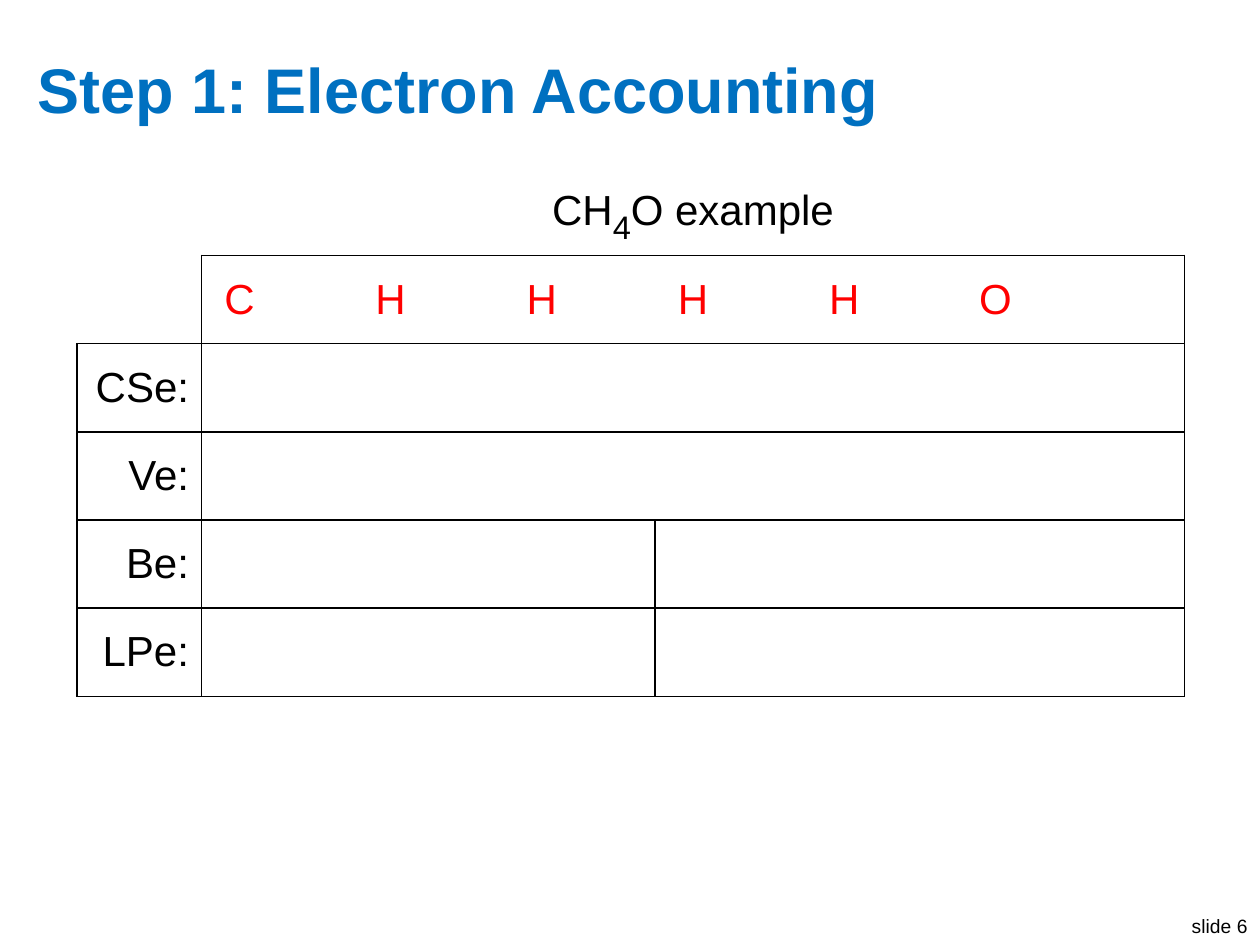
from lxml import etree
from pptx import Presentation
from pptx.dml.color import RGBColor
from pptx.enum import text
from pptx.oxml import ns
from pptx.util import Pt

BLACK = RGBColor(0, 0, 0)
WHITE = RGBColor(255, 255, 255)
RED = RGBColor(255, 0, 0)
BLUE = RGBColor(0, 0x70, 0xC0)
RIGHT, CENTER = text.PP_ALIGN.RIGHT, text.PP_ALIGN.CENTER


def style(p, size, color, align=None, bold=False):
    p.alignment = align
    for r in p.runs:
        r.font.name, r.font.size, r.font.bold = "Arial", Pt(size), bold
        r.font.color.rgb = color


def set_borders(cell, drawn):
    # Lines come before the fill, in the order left, right, top, bottom
    tcPr = cell._tc.get_or_add_tcPr()
    for i, side in enumerate("LRTB"):
        ln = etree.Element(ns.qn(f"a:ln{side}"), w=str(Pt(1)))
        if side in drawn:
            fill = etree.SubElement(ln, ns.qn("a:solidFill"))
            etree.SubElement(fill, ns.qn("a:srgbClr"), val=str(BLACK))
        else:
            etree.SubElement(ln, ns.qn("a:noFill"))
        tcPr.insert(i, ln)


prs = Presentation()
prs.slide_width, prs.slide_height = Pt(720), Pt(540)
s = prs.slides.add_slide(prs.slide_layouts[6])

# Slide number
tf = s.shapes.add_textbox(Pt(666), Pt(519), Pt(54), Pt(21)).text_frame
tf.word_wrap = False
tf.text = "slide 6"
style(tf.paragraphs[0], 11, BLACK, RIGHT)

# Title
tf = s.shapes.add_textbox(Pt(14.4), Pt(21.6), Pt(691.2), Pt(57.6)).text_frame
tf.word_wrap = True
tf.vertical_anchor = text.MSO_ANCHOR.MIDDLE
tf.text = "Step 1: Electron Accounting"
style(tf.paragraphs[0], 36, BLUE, bold=True)

# Table grid
ROWS, COLS = 6, 14
tbl = s.shapes.add_table(ROWS, COLS, Pt(43.9), Pt(95), Pt(632.9), Pt(302.4)).table
tbl.first_row = tbl.horz_banding = False
for c, col in enumerate(tbl.columns):
    col.width = Pt(43.2 if c else 71.3)
for row in tbl.rows:
    row.height = Pt(50.4)

# Merged cells: heading, then two halves in the last two rows
for r, first, last in [(0, 1, 13), (4, 1, 6), (4, 7, 13), (5, 1, 6), (5, 7, 13)]:
    tbl.cell(r, first).merge(tbl.cell(r, last))

# Fills and borders; the columns where each row has a vertical line
edges = [(), (1, 14), (0, 1, 14), (0, 1, 14), (0, 1, 7, 14), (0, 1, 7, 14)]
for r in range(ROWS):
    for c in range(COLS):
        cell = tbl.cell(r, c)
        cell.vertical_anchor = text.MSO_ANCHOR.MIDDLE
        cell.fill.solid()
        cell.fill.fore_color.rgb = WHITE
        first_line = 1 if c else 2
        end = c + (cell.span_width if cell.is_merge_origin else 1)
        set_borders(cell, [side for side, on in (
            ("L", c in edges[r]), ("R", end in edges[r]),
            ("T", r >= first_line), ("B", r + 1 >= first_line)) if on])

# Heading with subscript
p = tbl.cell(0, 1).text_frame.paragraphs[0]
for part in ("CH", "4", "O example"):
    p.add_run().text = part
style(p, 24, BLACK, CENTER)
sub = p.runs[1].font
sub.size = Pt(32)
sub._element.set("baseline", "-25000")

# Atoms in every second column
for i, atom in enumerate("CHHHHO"):
    p = tbl.cell(1, 1 + 2 * i).text_frame.paragraphs[0]
    p.text = atom
    style(p, 24, RED, CENTER)

# Row labels
for r, label in enumerate(["CSe:", "Ve:", "Be:", "LPe:"], start=2):
    p = tbl.cell(r, 0).text_frame.paragraphs[0]
    p.text = label
    style(p, 24, BLACK, RIGHT)

prs.save("out.pptx")
